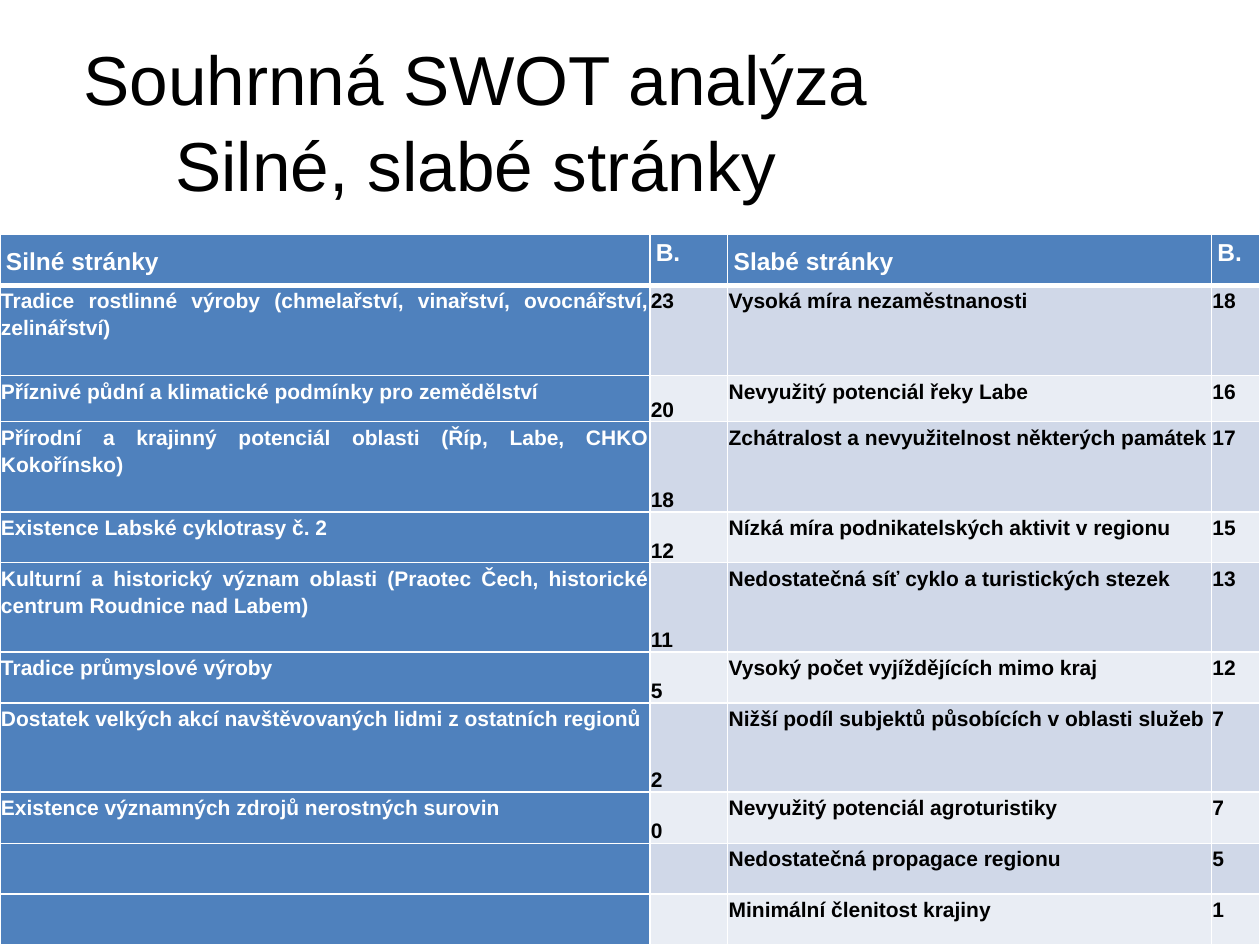
from lxml import etree
from pptx import Presentation
from pptx.dml.color import RGBColor
from pptx.enum.text import MSO_ANCHOR, PP_ALIGN
from pptx.oxml.ns import qn
from pptx.util import Cm, Pt

TOP, MIDDLE, BOTTOM = MSO_ANCHOR.TOP, MSO_ANCHOR.MIDDLE, MSO_ANCHOR.BOTTOM
CENTER, JUSTIFY = PP_ALIGN.CENTER, PP_ALIGN.JUSTIFY

COLORS = {
    "black": "000000",
    "white": "FFFFFF",
    "blue": "4F81BD",
    "odd": "D0D8E8",
    "even": "E9EDF4",
}
HEADER = ("Silné stránky", "B.", "Slabé stránky", "B.")
ROWS = [
    ("Tradice rostlinné výroby (chmelařství, vinařství, ovocnářství, zelinářství)", "23",
     "Vysoká míra nezaměstnanosti", "18"),
    ("Příznivé půdní a klimatické podmínky pro zemědělství", "20",
     "Nevyužitý potenciál řeky Labe", "16"),
    ("Přírodní a krajinný potenciál oblasti (Říp, Labe, CHKO Kokořínsko)", "18",
     "Zchátralost a nevyužitelnost některých památek", "17"),
    ("Existence Labské cyklotrasy č. 2", "12",
     "Nízká míra podnikatelských aktivit v regionu", "15"),
    ("Kulturní a historický význam oblasti (Praotec Čech, historické centrum Roudnice nad Labem)", "11",
     "Nedostatečná síť cyklo a turistických stezek", "13"),
    ("Tradice průmyslové výroby", "5",
     "Vysoký počet vyjíždějících mimo kraj", "12"),
    ("Dostatek velkých akcí navštěvovaných lidmi z ostatních regionů", "2",
     "Nižší podíl subjektů působících v oblasti služeb", "7"),
    ("Existence významných zdrojů nerostných surovin", "0",
     "Nevyužitý potenciál agroturistiky", "7"),
    ("", "", "Nedostatečná propagace regionu", "5"),
    ("", "", "Minimální členitost krajiny", "1"),
]
COLUMN_WIDTHS = (13.1, 1.57, 9.75, 0.98)
ROW_HEIGHTS = (1.02, 1.82, 0.93, 1.82, 1.02, 1.8, 1.03, 1.8, 1.03, 1.02, 1.02)


def write_text(frame, text, alignment, spacing, size, bold, color):
    for index, line in enumerate(text.split("\n")):
        paragraph = frame.paragraphs[0] if index == 0 else frame.add_paragraph()
        paragraph.alignment = alignment
        paragraph.line_spacing = spacing
        paragraph.font.size = Pt(size)
        if line:
            run = paragraph.add_run()
            run.text = line
            for name, value in {"name": "Arial", "size": Pt(size), "bold": bold}.items():
                setattr(run.font, name, value)
            run.font.color.rgb = RGBColor.from_string(COLORS[color])


def add_borders(cell, widths):
    properties = cell._tc.get_or_add_tcPr()
    for side, width in widths.items():
        line = etree.SubElement(properties, qn(f"a:ln{side}"), w=str(Pt(width)))
        fill = etree.SubElement(line, qn("a:solidFill"))
        etree.SubElement(fill, qn("a:srgbClr"), val=COLORS["white"])


presentation = Presentation()
presentation.slide_width, presentation.slide_height = Cm(25.4), Cm(19.05)
slide = presentation.slides.add_slide(presentation.slide_layouts[6])

# Title
title = slide.shapes.add_textbox(Cm(1.27), Cm(0.81), Cm(16.64), Cm(3.18))
title_format = {"word_wrap": True, "vertical_anchor": MIDDLE, "margin_top": 0, "margin_bottom": 0}
for name, value in title_format.items():
    setattr(title.text_frame, name, value)
write_text(title.text_frame, "Souhrnná SWOT analýza\nSilné, slabé stránky",
           CENTER, 1.04, 39.6, False, "black")

# Table grid
table = slide.shapes.add_table(len(ROW_HEIGHTS), len(COLUMN_WIDTHS), 0, Cm(4.73),
                               Cm(sum(COLUMN_WIDTHS)), Cm(sum(ROW_HEIGHTS))).table
for column, width in zip(table.columns, COLUMN_WIDTHS):
    column.width = Cm(width)
for row, height in zip(table.rows, ROW_HEIGHTS):
    row.height = Cm(height)

# Strengths and weaknesses with their points
for row_index, values in enumerate([HEADER, *ROWS]):
    is_header = row_index == 0
    for column_index, value in enumerate(values):
        cell = table.cell(row_index, column_index)
        is_blue = is_header or column_index == 0
        if is_header:
            anchor = MIDDLE if column_index % 2 == 0 else TOP
        else:
            anchor = BOTTOM if column_index == 1 and row_index > 1 else TOP
        side_margin = Cm(0.12 if is_header else 0.02)
        cell_format = {
            "vertical_anchor": anchor,
            "margin_left": side_margin,
            "margin_right": side_margin,
            "margin_top": Cm(0 if is_header else 0.02),
            "margin_bottom": 0,
        }
        for name, attribute in cell_format.items():
            setattr(cell, name, attribute)
        add_borders(cell, {"L": 1, "R": 1, "T": 3 if row_index == 1 else 1, "B": 3 if is_header else 1})
        band = "odd" if row_index % 2 else "even"
        cell.fill.solid()
        cell.fill.fore_color.rgb = RGBColor.from_string(COLORS["blue" if is_blue else band])
        write_text(cell.text_frame, value, JUSTIFY, 1.15, 14 if is_header else 12, True,
                   "white" if is_blue else "black")

presentation.save("out.pptx")
